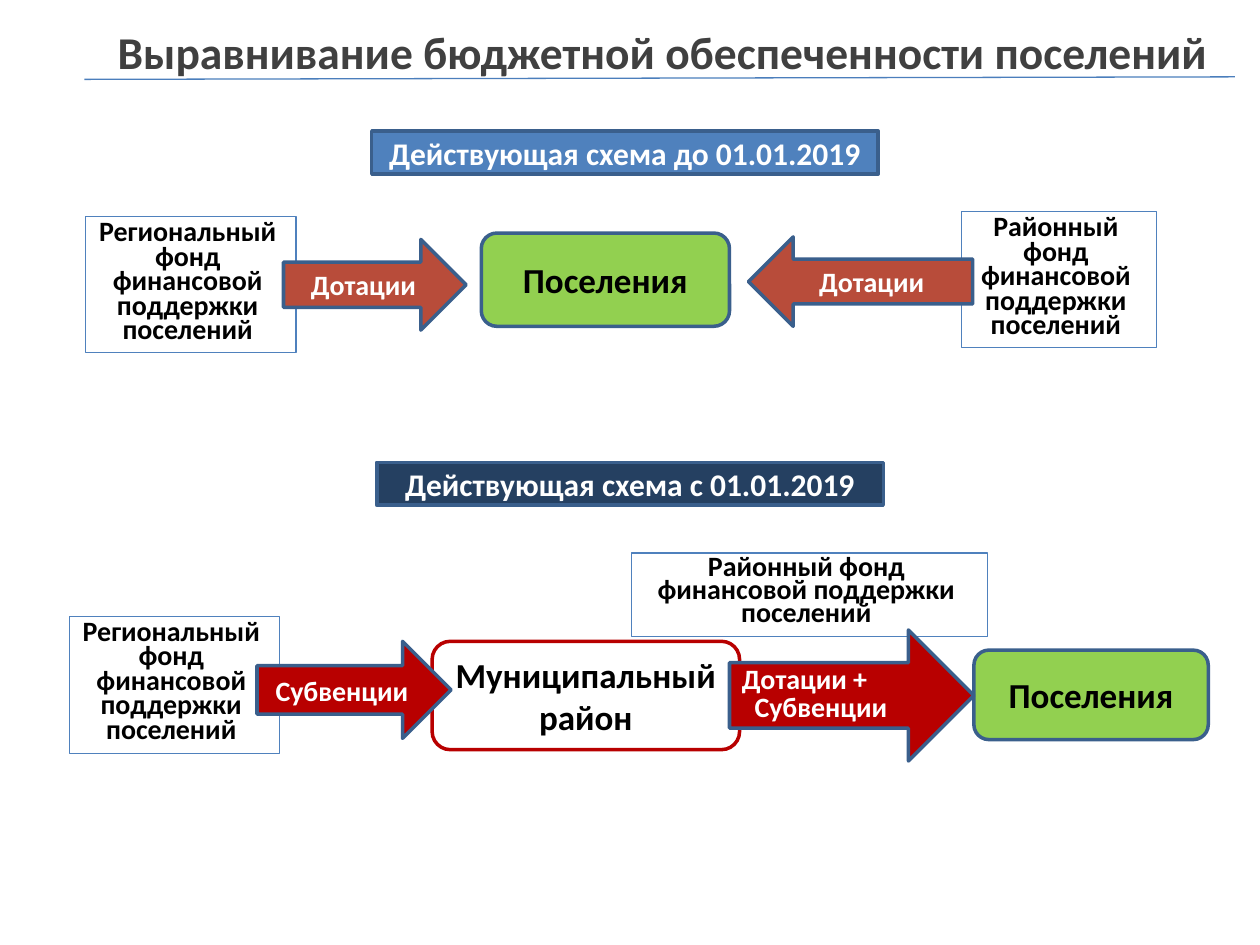
from dataclasses import dataclass

from lxml import etree
from pptx import Presentation
from pptx import util as u
from pptx.dml.color import RGBColor
from pptx.enum import shapes, text
from pptx.oxml.ns import qn

KIND = shapes.MSO_SHAPE
ALIGN = text.PP_ALIGN
COLUMNS, ROWS = 100, 75


@dataclass(frozen=True)
class Theme:
    font: str = "Calibri"
    title: str = "404040"
    dark: str = "000000"
    light: str = "FFFFFF"
    blue: str = "4F81BD"
    navy: str = "254061"
    outline: str = "3A5F8C"
    rule: str = "4B7EBC"
    green: str = "92D050"
    brick: str = "B84C3A"
    red: str = "B80000"
    title_size: int = 26
    node_size: int = 20
    banner_size: int = 18
    label_size: int = 16
    thin: float = 0.75
    thick: float = 2


class SchemeSlide:
    def __init__(self, deck, theme):
        self.theme = theme
        self.width, self.height = deck.slide_width, deck.slide_height
        self.slide = deck.slides.add_slide(deck.slide_layouts[5])

    def place(self, column, row, columns=0, rows=0):
        """Turn grid units into slide lengths."""
        across, down = self.width / COLUMNS, self.height / ROWS
        return [round(n) for n in (column * across, row * down,
                                   columns * across, rows * down)]

    def add_lines(self, frame, lines, size, color, align=ALIGN.CENTER, spacing=None):
        for index, line in enumerate(lines):
            para = frame.paragraphs[0] if index == 0 else frame.add_paragraph()
            para.alignment = align
            if spacing:
                para.line_spacing = u.Pt(spacing)
            span = para.add_run()
            span.text = line
            span.font.name = self.theme.font
            span.font.size = u.Pt(size)
            span.font.bold = True
            span.font.color.rgb = RGBColor.from_string(color)

    def title(self, line, *area):
        box = self.slide.shapes.title
        box.left, box.top, box.width, box.height = self.place(*area)
        frame = box.text_frame
        frame.auto_size = text.MSO_AUTO_SIZE.NONE
        frame.vertical_anchor = text.MSO_ANCHOR.MIDDLE
        self.add_lines(frame, [line], self.theme.title_size, self.theme.title)

    def rule(self, start, end):
        left, top = self.place(*start)[:2]
        right, bottom = self.place(*end)[:2]
        line = self.slide.shapes.add_connector(
            shapes.MSO_CONNECTOR.STRAIGHT, left, top, right, bottom)
        line.line.color.rgb = RGBColor.from_string(self.theme.rule)
        line.line.width = u.Pt(self.theme.thin)
        etree.SubElement(line._element.spPr, qn("a:effectLst"))

    def box(self, kind, area, fill, outline, weight):
        """Add a shape and return its text frame."""
        box = self.slide.shapes.add_shape(kind, *self.place(*area))
        box.shadow.inherit = False
        if fill:
            box.fill.solid()
            box.fill.fore_color.rgb = RGBColor.from_string(fill)
        else:
            box.fill.background()
        box.line.color.rgb = RGBColor.from_string(outline)
        box.line.width = u.Pt(weight)
        frame = box.text_frame
        frame.word_wrap = True
        frame.vertical_anchor = text.MSO_ANCHOR.MIDDLE
        return frame

    def banner(self, line, fill, *area):
        theme = self.theme
        frame = self.box(KIND.FLOWCHART_PROCESS, area, fill, theme.outline, theme.thick)
        self.add_lines(frame, [line], theme.banner_size, theme.light)

    def settlements(self, *area):
        theme = self.theme
        frame = self.box(KIND.ROUNDED_RECTANGLE, area, theme.green,
                         theme.outline, theme.thick)
        self.add_lines(frame, ["Поселения"], theme.node_size, theme.dark)

    def district(self, line, *area):
        theme = self.theme
        frame = self.box(KIND.FLOWCHART_ALTERNATE_PROCESS, area, None,
                         theme.red, theme.thick)
        self.add_lines(frame, [line], theme.node_size, theme.dark)

    def fund(self, lines, *area, spacing=14, wrap=True):
        theme = self.theme
        frame = self.box(KIND.RECTANGLE, area, None, theme.blue, theme.thin)
        frame.vertical_anchor = text.MSO_ANCHOR.TOP
        frame.word_wrap = wrap
        frame.auto_size = text.MSO_AUTO_SIZE.SHAPE_TO_FIT_TEXT
        self.add_lines(frame, lines, theme.label_size, theme.dark, spacing=spacing)

    def arrow(self, lines, fill, *area, kind=KIND.RIGHT_ARROW,
              align=ALIGN.CENTER, spacing=None):
        """Add a block arrow; lines after the first are indented."""
        theme = self.theme
        frame = self.box(kind, area, fill, theme.outline, theme.thick)
        self.add_lines(frame, lines, theme.label_size, theme.light, align, spacing)
        for para in frame.paragraphs[1:]:
            para._p.get_or_add_pPr().set("marL", str(u.Inches(0.1)))


def main():
    deck = Presentation()
    deck.slide_width, deck.slide_height = u.Inches(10), u.Inches(7.5)
    theme = Theme()
    page = SchemeSlide(deck, theme)
    fund_tail = ["фонд ", "финансовой ", "поддержки ", "поселений "]
    regional = ["Региональный "] + fund_tail

    page.title("Выравнивание бюджетной обеспеченности поселений ", 6.1, 1.3, 93.9, 5.5)

    page.fund(["Районный фонд ", "финансовой поддержки ", "поселений "],
              50.1, 43.9, 28.3, 6.6, spacing=13)
    page.district("Муниципальный район", 34.3, 50.9, 24.4, 8.6)

    page.banner("Действующая схема до 01.01.2019", theme.blue, 29.5, 10.4, 40.2, 3.4)
    page.settlements(38.2, 18.5, 19.7, 7.4)
    page.fund(regional, 6.8, 17.2, 16.7, 10.8)
    page.fund(["Районный "] + fund_tail, 76.3, 16.8, 15.5, 10.8)
    page.arrow(["Дотации"], theme.brick, 22.5, 19, 14.5, 7.2)
    page.arrow(["Дотации"], theme.brick, 59.4, 18.8, 17.8, 7.1, kind=KIND.LEFT_ARROW)

    page.banner("Действующая схема с 01.01.2019", theme.navy, 29.9, 36.7, 40.2, 3.4)
    page.settlements(77.3, 51.6, 18.6, 7.1)
    page.fund(regional, 5.5, 48.9, 16.7, 10.9, wrap=False)
    page.arrow(["Субвенции"], theme.red, 20.4, 50.9, 15.4, 7.7)
    page.arrow(["Дотации +", "Субвенции"], theme.red, 57.9, 50, 19.4, 10.4,
               align=ALIGN.JUSTIFY, spacing=16)

    page.rule((6.7, 6.3), (98, 6.1))
    deck.save("out.pptx")


if __name__ == "__main__":
    main()
